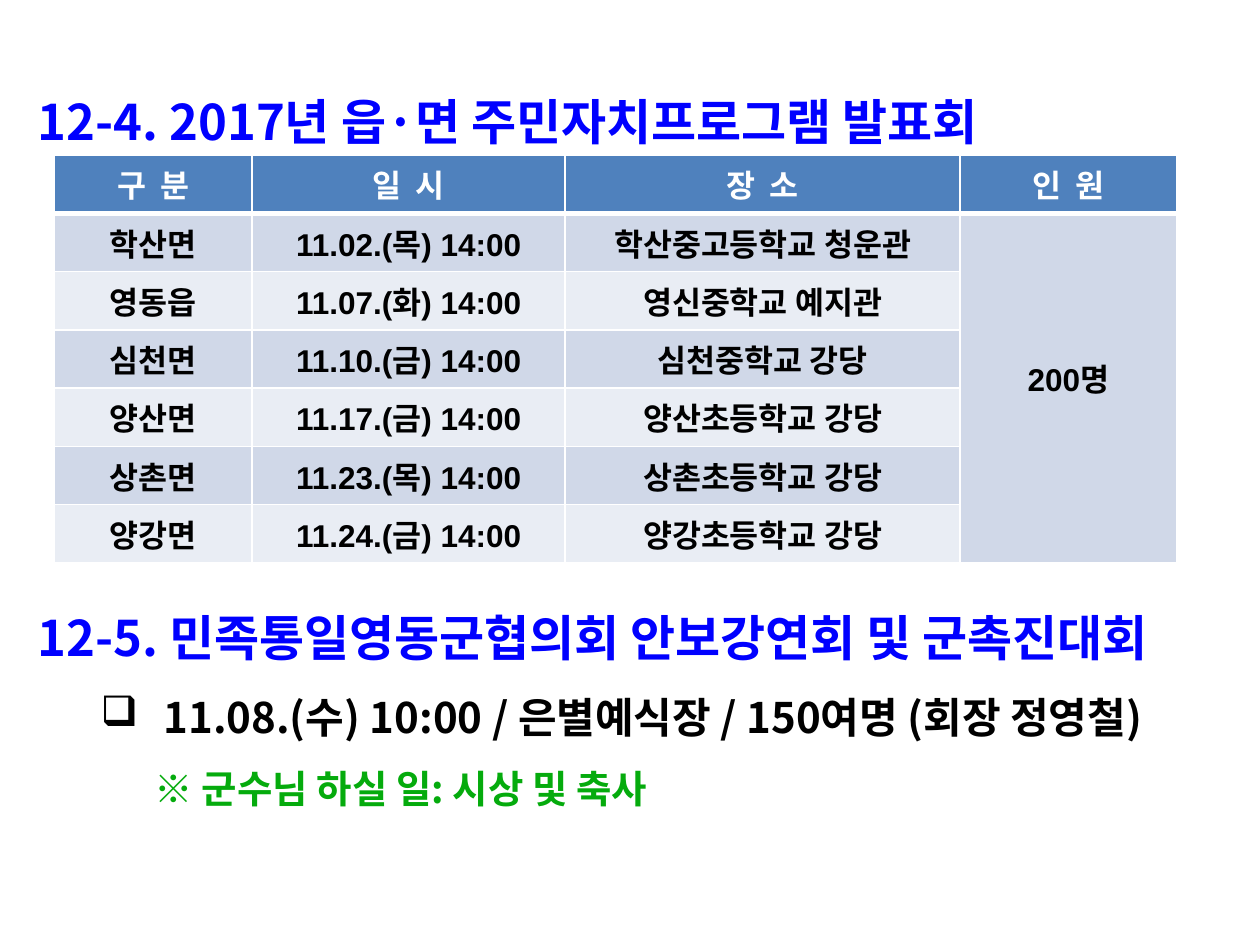
from pptx import Presentation
from pptx.dml.color import RGBColor
from pptx.enum import text
from pptx.oxml.ns import qn
from pptx.util import Pt
from lxml import etree

BLUE = RGBColor(0x00, 0x00, 0xFF)
GREEN = RGBColor(0x05, 0xAB, 0x0D)
BLACK = RGBColor(0x00, 0x00, 0x00)
WHITE = RGBColor(0xFF, 0xFF, 0xFF)
HEADER = RGBColor(0x4F, 0x81, 0xBD)
BANDS = RGBColor(0xD0, 0xD8, 0xE8), RGBColor(0xE9, 0xED, 0xF4)
KOREAN = "Noto Sans CJK KR"

COLUMNS = ("구  분", 113), ("일  시", 179), ("장  소", 225.5), ("인  원", 124)
EVENTS = [
    ("학산면", "11.02.(목) 14:00", "학산중고등학교 청운관"),
    ("영동읍", "11.07.(화) 14:00", "영신중학교 예지관"),
    ("심천면", "11.10.(금) 14:00", "심천중학교 강당"),
    ("양산면", "11.17.(금) 14:00", "양산초등학교 강당"),
    ("상촌면", "11.23.(목) 14:00", "상촌초등학교 강당"),
    ("양강면", "11.24.(금) 14:00", "양강초등학교 강당"),
]


def style(p, size, color, name=KOREAN):
    f = p.font
    f.size, f.bold, f.name = Pt(size), True, name
    f.color.rgb = color
    ea = etree.Element(qn("a:ea"), typeface=KOREAN)
    f._element.find(qn("a:latin")).addnext(ea)


def indent(p, left, first=0, bullet=None):
    pPr = p._p.get_or_add_pPr()
    pPr.set("marL", str(Pt(left)))
    pPr.set("indent", str(Pt(first)))
    if bullet:
        bu = etree.Element(qn("a:buChar"), char=bullet)
        pPr.find(qn("a:defRPr")).addprevious(bu)


def add_line(p, words, size, color):
    p.text = words
    p.alignment = text.PP_ALIGN.LEFT
    p.line_spacing = 1.5
    style(p, size, color)


def add_heading(s, x, y, w, h):
    sp = s.shapes.title
    sp.left, sp.top, sp.width, sp.height = Pt(x), Pt(y), Pt(w), Pt(h)
    tf = sp.text_frame
    tf.word_wrap = True
    tf.auto_size = text.MSO_AUTO_SIZE.NONE
    tf.vertical_anchor = text.MSO_ANCHOR.TOP
    add_line(tf.paragraphs[0], "12-4. 2017년 읍·면 주민자치프로그램 발표회", 28, BLUE)


def fill_cell(cell, words, fill, color=BLACK):
    cell.fill.solid()
    cell.fill.fore_color.rgb = fill
    p = cell.text_frame.paragraphs[0]
    p.text = words
    p.alignment = text.PP_ALIGN.CENTER
    style(p, 18, color, "Arial")


def underline_cell(cell, width, color):
    ln = etree.Element(qn("a:lnB"), w=str(Pt(width)))
    fill = etree.SubElement(ln, qn("a:solidFill"))
    etree.SubElement(fill, qn("a:srgbClr"), val=str(color))
    cell._tc.get_or_add_tcPr().insert(0, ln)


def add_schedule(s, x, y, w, h):
    rows = len(EVENTS) + 1
    tbl = s.shapes.add_table(rows, len(COLUMNS), Pt(x), Pt(y), Pt(w), Pt(h)).table
    for c, (label, width) in enumerate(COLUMNS):
        tbl.columns[c].width = Pt(width)
        fill_cell(tbl.cell(0, c), label, HEADER, WHITE)
        underline_cell(tbl.cell(0, c), 3, WHITE)
    for r, event in enumerate(EVENTS, 1):
        for c, words in enumerate(event):
            fill_cell(tbl.cell(r, c), words, BANDS[(r - 1) % 2])
    total = tbl.cell(1, 3)
    total.merge(tbl.cell(rows - 1, 3))
    fill_cell(total, "200명", BANDS[0])
    total.vertical_anchor = text.MSO_ANCHOR.MIDDLE
    total.margin_bottom = Pt(15)


def add_rally(s, x, y, w, h):
    tf = s.shapes.add_textbox(Pt(x), Pt(y), Pt(w), Pt(h)).text_frame
    tf.word_wrap = True
    add_line(tf.paragraphs[0], "12-5. 민족통일영동군협의회 안보강연회 및 군촉진대회", 28, BLUE)
    p = tf.add_paragraph()
    add_line(p, "11.08.(수) 10:00 / 은별예식장 / 150여명 (회장 정영철)", 24, BLACK)
    indent(p, 72, -36, "❑")
    p = tf.add_paragraph()
    add_line(p, "※ 군수님 하실 일: 시상 및 축사", 22, GREEN)
    indent(p, 67)


def main():
    prs = Presentation()
    prs.slide_width, prs.slide_height = Pt(720), Pt(540)
    s = prs.slides.add_slide(prs.slide_layouts[5])
    add_heading(s, 14.4, 31.7, 720, 281.5)
    add_schedule(s, 31, 88.6, 641.5, 204.5)
    add_rally(s, 14.4, 326.9, 720, 135.4)
    prs.save("out.pptx")


if __name__ == "__main__":
    main()
